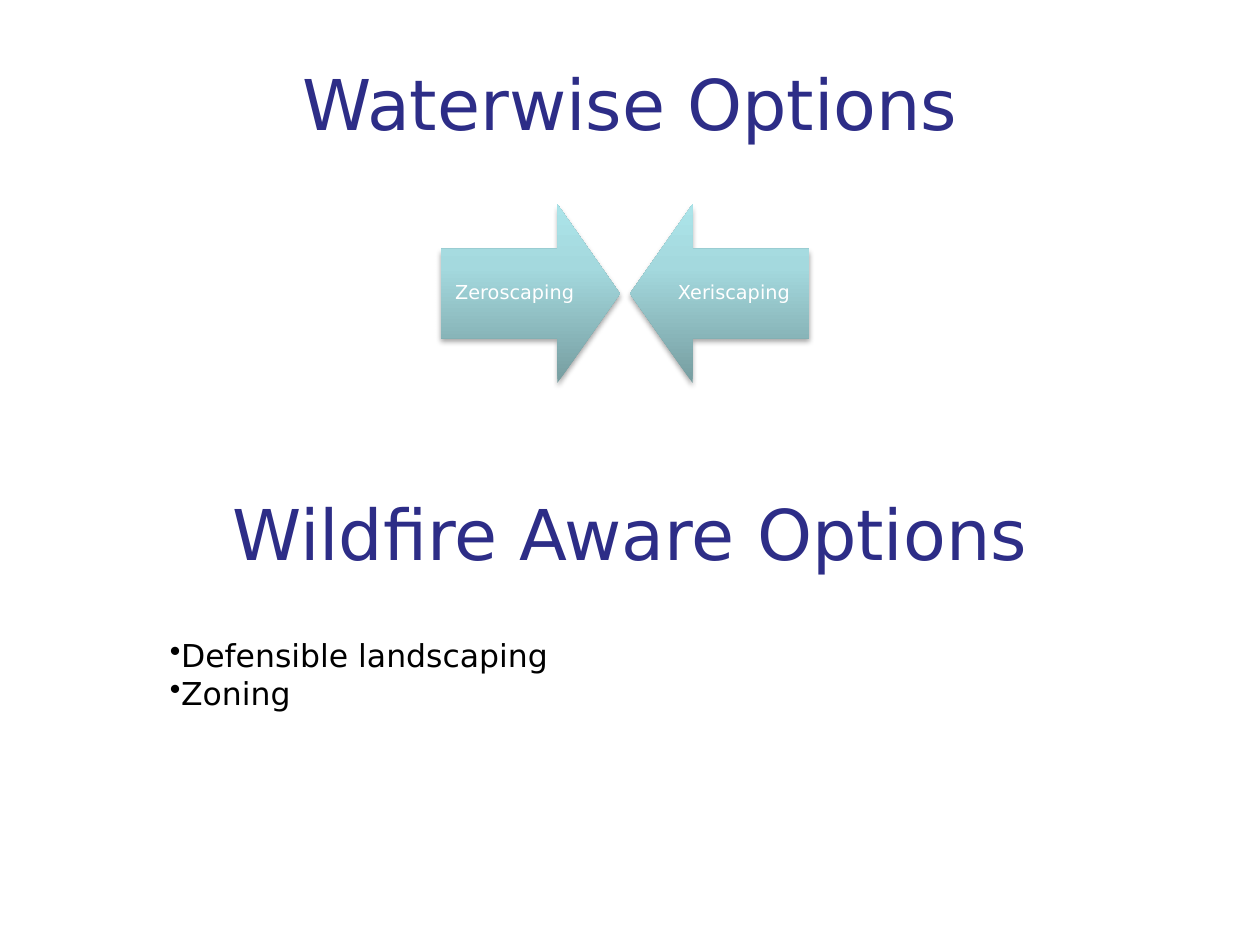
from lxml import etree
from pptx import Presentation
from pptx.dml.color import RGBColor
from pptx.enum.shapes import MSO_SHAPE
from pptx.enum.text import MSO_ANCHOR, PP_ALIGN
from pptx.oxml.ns import qn
from pptx.util import Inches, Pt

DOWN_ARROW = MSO_SHAPE.DOWN_ARROW
TOP, MIDDLE = MSO_ANCHOR.TOP, MSO_ANCHOR.MIDDLE
LEFT, CENTER = PP_ALIGN.LEFT, PP_ALIGN.CENTER

FONT = "DejaVu Sans"
NAVY, WHITE, BLACK = "2D2D87", "FFFFFF", "000000"
ARROW_STOPS = [(0, "769DA0"), (65, "A4D9DE"), (100, "ACE4E9")]
ARROW_SIZE = 1.42
ARROW_TOP = 1.62


def color(hex_string):
    return RGBColor.from_string(hex_string)


def add_element(parent, tag, **attributes):
    return etree.SubElement(parent, qn(tag), attributes)


def add_text(slide, box, lines, size, hex_color, align=CENTER, anchor=MIDDLE, bullet=None):
    shape = slide.shapes.add_textbox(*(Inches(value) for value in box))
    text_frame = shape.text_frame
    text_frame.word_wrap = True
    text_frame.vertical_anchor = anchor
    text_frame.text = "\n".join(lines)
    for paragraph in text_frame.paragraphs:
        paragraph.alignment = align
        if bullet:
            properties = paragraph._p.get_or_add_pPr()
            add_element(properties, "a:buChar", char=bullet)
        font = paragraph.runs[0].font
        font.name, font.size = FONT, Pt(size)
        font.color.rgb = color(hex_color)
    return shape


def fill_with_gradient(shape, stops):
    shape.fill.gradient()
    shape.fill.gradient_angle = 90
    gradient = shape._element.spPr.find(qn("a:gradFill"))
    gradient.set("rotWithShape", "0")
    stop_list = gradient.find(qn("a:gsLst"))
    for old_stop in list(stop_list):
        stop_list.remove(old_stop)
    for position, hex_color in stops:
        stop = add_element(stop_list, "a:gs", pos=str(position * 1000))
        add_element(stop, "a:srgbClr", val=hex_color)


def add_soft_shadow(shape):
    shape.shadow.inherit = False
    effects = shape._element.spPr.find(qn("a:effectLst"))
    shadow = add_element(effects, "a:outerShdw", blurRad=str(Pt(3.1)), dist=str(Pt(2)),
                         dir="5400000", rotWithShape="0")
    shadow_color = add_element(shadow, "a:srgbClr", val=BLACK)
    add_element(shadow_color, "a:alpha", val="35000")


def add_arrow(slide, left, rotation, label, label_left):
    arrow = slide.shapes.add_shape(DOWN_ARROW, Inches(left), Inches(ARROW_TOP),
                                   Inches(ARROW_SIZE), Inches(ARROW_SIZE))
    arrow.rotation = rotation
    arrow.adjustments[0] = 0.5
    arrow.adjustments[1] = 0.35
    arrow.line.fill.background()
    fill_with_gradient(arrow, ARROW_STOPS)
    add_soft_shadow(arrow)

    # The label covers the shaft, which is half the arrow's height
    label_box = (label_left, ARROW_TOP + ARROW_SIZE / 4, 1.17, ARROW_SIZE / 2)
    text_frame = add_text(slide, label_box, [label], 11, WHITE).text_frame
    text_frame.margin_left = text_frame.margin_right = Inches(0.09)
    text_frame.margin_top = text_frame.margin_bottom = Inches(0.09)
    text_frame.paragraphs[0].line_spacing = 0.9


def main():
    presentation = Presentation()
    presentation.slide_width, presentation.slide_height = Inches(10), Inches(7.5)
    slide = presentation.slides.add_slide(presentation.slide_layouts[6])

    # Water section: two arrows pointing at each other
    add_text(slide, (1.21, 0.25, 7.58, 1.12), ["Waterwise Options"], 40, NAVY)
    add_arrow(slide, 3.5, 270, "Zeroscaping", 3.5)
    add_arrow(slide, 5, 90, "Xeriscaping", 5.24)

    # Wildfire section: heading and bullets
    add_text(slide, (1.21, 3.67, 7.58, 1.12), ["Wildfire Aware Options"], 40, NAVY)
    add_text(slide, (1.25, 5, 7.58, 1.5), ["Defensible landscaping", "Zoning"],
             18, BLACK, LEFT, TOP, "•")

    presentation.save("out.pptx")


if __name__ == "__main__":
    main()
